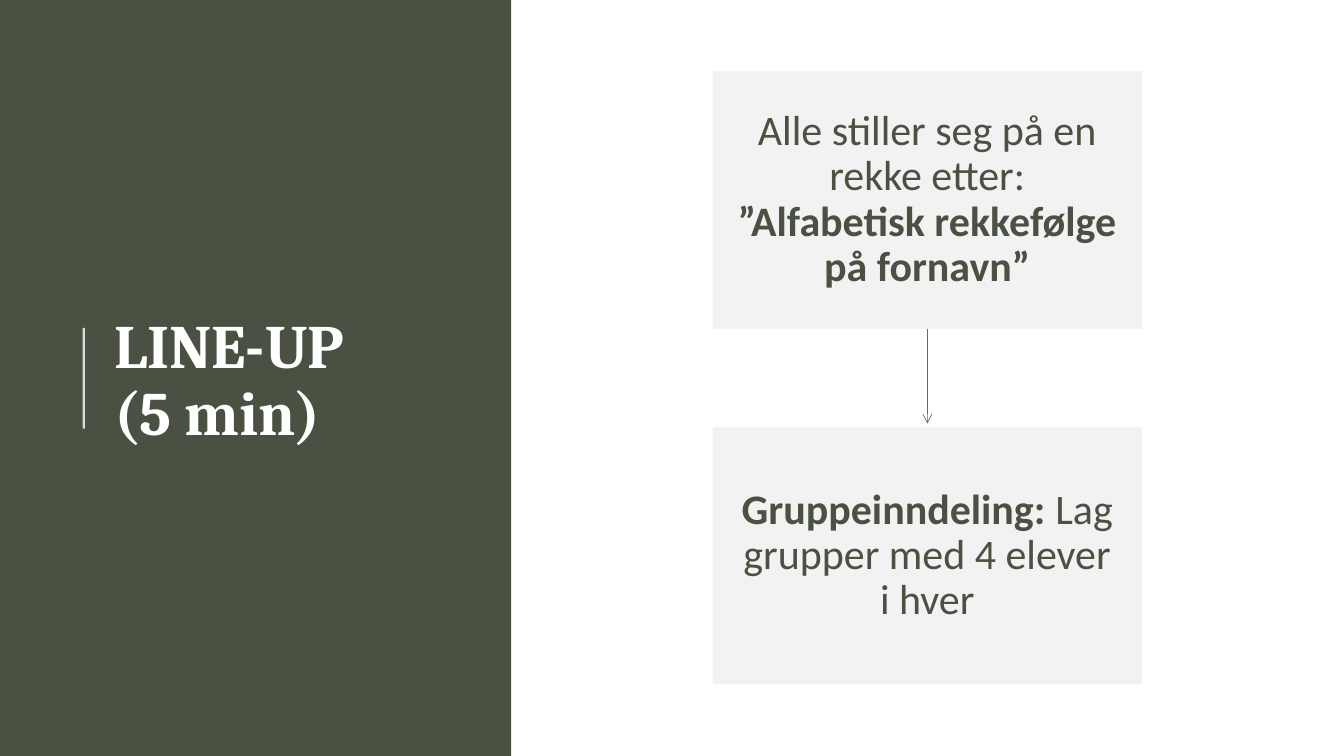
from lxml.etree import SubElement
from pptx import Presentation
from pptx.dml.color import RGBColor
from pptx.enum.shapes import MSO_CONNECTOR, MSO_SHAPE
from pptx.enum.text import MSO_ANCHOR, MSO_AUTO_SIZE, PP_ALIGN
from pptx.oxml.ns import qn
from pptx.util import Cm, Pt

GREEN = RGBColor(0x4A, 0x51, 0x42)
MOSS = RGBColor(0x62, 0x6C, 0x57)
PALE = RGBColor(0xF2, 0xF2, 0xF2)
WHITE = RGBColor(0xFF, 0xFF, 0xFF)

WIDE, HIGH = 33.87, 19.05
LEFT, TOP, STEP = 17.96, 1.8, 8.97
BOX_W, BOX_H = 10.82, 6.48
STEPS = [
    [("Alle stiller seg på en rekke etter: ", False),
     ("”Alfabetisk rekkefølge på fornavn”", True)],
    [("Gruppeinndeling:", True), (" Lag grupper med 4 elever", False),
     ("\v", False), ("i hver", False)],
]


class Page:
    """Holds the fonts and the current slide, and draws each kind of element."""

    head, body = "Cambria", "Calibri"

    def __init__(self, deck):
        self.slide = deck.slides.add_slide(deck.slide_layouts[5])

    def style(self, font, name, size, color, bold):
        font.name, font.size, font.bold = name, Pt(size), bold
        font.color.rgb = color

    def title(self, text, x, y, w, h):
        shape = self.slide.shapes.title
        shape.left, shape.top, shape.width, shape.height = Cm(x), Cm(y), Cm(w), Cm(h)
        frame = shape.text_frame
        frame.text = text
        frame.word_wrap = True
        frame.auto_size = MSO_AUTO_SIZE.NONE
        frame.vertical_anchor = MSO_ANCHOR.MIDDLE
        para = frame.paragraphs[0]
        para.alignment = PP_ALIGN.LEFT
        para.line_spacing = 0.9
        for run in para.runs:
            self.style(run.font, self.head, 44, WHITE, True)
        shape.element.getparent().append(shape.element)

    def rect(self, x, y, w, h, color):
        shape = self.slide.shapes.add_shape(
            MSO_SHAPE.RECTANGLE, Cm(x), Cm(y), Cm(w), Cm(h))
        shape.shadow.inherit = False
        shape.fill.solid()
        shape.fill.fore_color.rgb = color
        shape.line.fill.background()
        return shape

    def card(self, x, y, parts):
        shape = self.rect(x, y, BOX_W, BOX_H, PALE)
        frame = shape.text_frame
        frame.word_wrap = True
        frame.vertical_anchor = MSO_ANCHOR.MIDDLE
        frame.margin_left = frame.margin_right = Cm(0.53)
        frame.margin_top = frame.margin_bottom = Cm(0.56)
        para = frame.paragraphs[0]
        para.alignment = PP_ALIGN.CENTER
        para.line_spacing = 0.9
        for text, bold in parts:
            if text == "\v":
                para.add_line_break()
                continue
            run = para.add_run()
            run.text = text
            self.style(run.font, self.body, 30, GREEN, bold)
        return shape

    def line(self, x, start, end, color, width):
        link = self.slide.shapes.add_connector(
            MSO_CONNECTOR.STRAIGHT, Cm(x), Cm(start), Cm(x), Cm(end))
        link.line.color.rgb = color
        link.line.width = Pt(width)
        SubElement(link.element.spPr, qn("a:effectLst"))
        return link

    def rule(self, x, start, end):
        link = self.line(x, start, end, WHITE, 1.5)
        tint = link.element.spPr.find(".//" + qn("a:srgbClr"))
        SubElement(tint, qn("a:alpha"), val="80000")

    def arrow(self, x, start, end, source):
        link = self.line(x, start, end, MOSS, 0.5)
        stroke = link.element.spPr.find(qn("a:ln"))
        SubElement(stroke, qn("a:tailEnd"), type="arrow")
        link.begin_connect(source, 2)


def main():
    """Builds the slide and saves it."""
    deck = Presentation()
    deck.slide_width, deck.slide_height = Cm(WIDE), Cm(HIGH)
    page = Page(deck)
    page.rect(0, 0, 12.88, HIGH, GREEN)
    page.rule(2.11, 8.26, 10.8)
    page.title("LINE-UP\v(5 min)", 2.62, 1.98, 9.37, 15.29)
    cards = [page.card(LEFT, TOP + i * STEP, parts) for i, parts in enumerate(STEPS)]
    page.arrow(LEFT + BOX_W / 2, TOP + BOX_H, TOP + STEP - 0.1, cards[0])
    deck.save("out.pptx")


if __name__ == "__main__":
    main()
